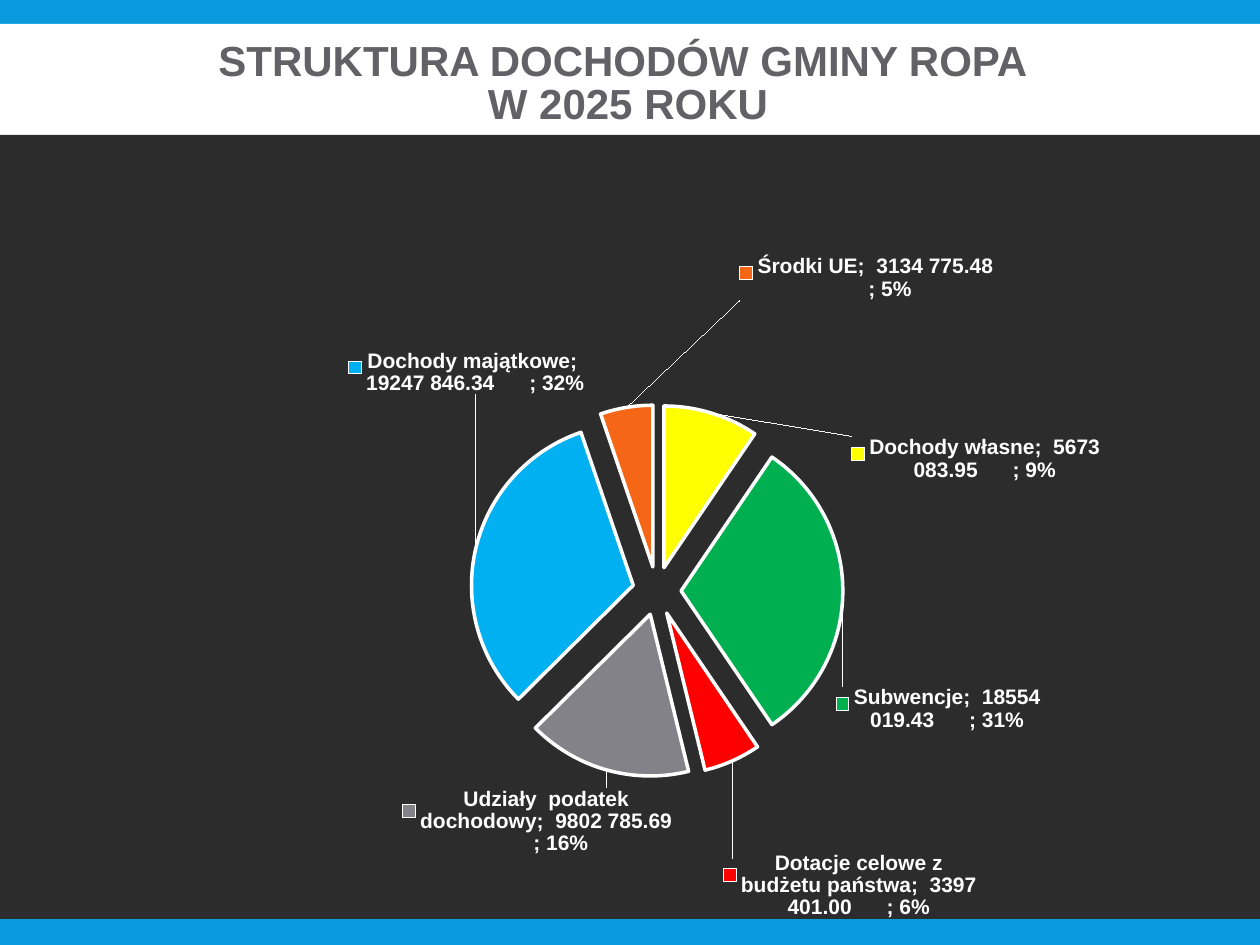
"""Build a slide with an exploded pie chart of a municipality's income."""
from copy import deepcopy

from lxml.etree import SubElement, fromstring
from pptx import Presentation
from pptx.chart.data import CategoryChartData
from pptx.dml.color import RGBColor
from pptx.enum.chart import XL_CHART_TYPE as ChartType, XL_LABEL_POSITION as LabelPosition
from pptx.enum.shapes import MSO_SHAPE as Shape
from pptx.enum.text import MSO_ANCHOR as Anchor, MSO_AUTO_SIZE as AutoSize, PP_ALIGN as Align
from pptx.oxml.ns import nsdecls, qn
from pptx.util import Emu, Pt

TITLE = ["STRUKTURA DOCHODÓW GMINY ROPA ", "W 2025 ROKU"]
BLUE, DARK, WHITE, GREY = "099BDD", "2C2C2C", "FFFFFF", "616166"
# name, value, colour, label shift in px
INCOME = [
    ("Dochody własne", 5673083.95, "FFFF00", (138, 75)),
    ("Subwencje", 18554019.43, "00B050", (-14, 118)),
    ("Dotacje celowe z budżetu państwa", 3397401.00, "FF0000", (-12, 91)),
    ("Udziały  podatek dochodowy", 9802785.69, "828288", (68, 11)),
    ("Dochody majątkowe", 19247846.34, "00B0F0", (116, -152)),
    ("Środki UE", 3134775.48, "F56617", (380, -100)),
]
NUMBER_FORMAT = r"_-* #\ ##0.00\ _z_ł_-;\-* #\ ##0.00\ _z_ł_-"
PAGE = (1260, 945)
BAND_BOX = (0, 24, 1260, 227)
TITLE_BOX = (64, 35, 1128, 100)
CHART_BOX = (0, 135, 1262, 784)
PLOT_BOX = (100, 270, 1114, 372)
EXPLOSION = 15


def px(length):
    return Emu(round(length * 914400 / 126))


def color(value):
    return RGBColor.from_string(value)


def place(item, box):
    item.left, item.top, item.width, item.height = map(px, box)


def set_font(font, name, size, value, bold):
    font.name, font.size, font.bold = name, Pt(size), bold
    font.color.rgb = color(value)


def layout(numbers, inner=False):
    """Return a manual layout whose px lengths become fractions of the chart."""
    root = fromstring(f"<c:layout {nsdecls('c')}/>")
    manual = SubElement(root, qn("c:manualLayout"))
    if inner:
        for tag, value in (("layoutTarget", "inner"), ("xMode", "edge"), ("yMode", "edge")):
            SubElement(manual, qn(f"c:{tag}")).set("val", value)
    for tag, number, whole in zip("xywh", numbers, CHART_BOX[2:] * 2):
        SubElement(manual, qn(f"c:{tag}")).set("val", f"{number / whole:.4f}")
    return root


def add_title(page):
    band = page.shapes.add_shape(Shape.RECTANGLE, *map(px, BAND_BOX))
    band.shadow.inherit = False
    band.fill.solid()
    band.fill.fore_color.rgb = color(WHITE)
    band.line.fill.background()
    title = page.shapes.title
    band._element.getparent().insert(2, band._element)
    place(title, TITLE_BOX)
    frame = title.text_frame
    frame.word_wrap, frame.auto_size = True, AutoSize.NONE
    frame.vertical_anchor = Anchor.MIDDLE
    para = frame.paragraphs[0]
    para.alignment, para.line_spacing = Align.CENTER, 0.85
    for index, line in enumerate(TITLE):
        if index:
            para.add_line_break()
        span = para.add_run()
        span.text = line
        set_font(span.font, "Arial", 24, GREY, True)


def style_labels(series):
    labels = series.data_labels
    labels.number_format, labels.number_format_is_linked = NUMBER_FORMAT, True
    labels.position = LabelPosition.OUTSIDE_END
    labels.show_value = labels.show_percentage = True
    labels.show_category_name = labels.show_legend_key = True
    set_font(labels.font, "Arial", 12, WHITE, True)
    group = labels._element
    separator = fromstring(f"<c:separator {nsdecls('c')}>; </c:separator>")
    group.find(qn("c:showBubbleSize")).addnext(separator)
    shared = [part for part in group if part.tag != qn("c:showLeaderLines")]
    for index, (*_, shift) in enumerate(INCOME):
        label = fromstring(f'<c:dLbl {nsdecls("c")}><c:idx val="{index}"/></c:dLbl>')
        label.append(layout(shift))
        label.extend(deepcopy(part) for part in shared)
        group.insert(index, label)


def add_pie(page):
    data = CategoryChartData(number_format=NUMBER_FORMAT)
    data.categories = [name for name, *_ in INCOME]
    data.add_series("Series 1", [value for _, value, *_ in INCOME])
    chart = page.shapes.add_chart(ChartType.PIE, *map(px, CHART_BOX), data).chart
    chart.has_legend = chart.has_title = False
    set_font(chart.font, "Calibri", 10, WHITE, False)
    background = fromstring(
        f'<c:spPr {nsdecls("c", "a")}><a:solidFill><a:srgbClr val="{DARK}"/></a:solidFill>'
        "<a:ln><a:noFill/></a:ln></c:spPr>")
    chart.element.find(qn("c:chart")).addnext(background)
    area = chart.element.find(f".//{qn('c:plotArea')}")
    for old in area.findall(qn("c:layout")):
        area.remove(old)
    area.insert(0, layout(PLOT_BOX, inner=True))
    plot = chart.plots[0]
    plot.vary_by_categories = True
    series = plot.series[0]
    series.format.line.color.rgb = color(WHITE)
    explosion = fromstring(f'<c:explosion {nsdecls("c")} val="{EXPLOSION}"/>')
    series._element.find(qn("c:spPr")).addnext(explosion)
    for index, (_, _, fill, _) in enumerate(INCOME):
        look = series.points[index].format
        look.fill.solid()
        look.fill.fore_color.rgb = color(fill)
        look.line.color.rgb = color(WHITE)
        look.line.width = Pt(2)
    style_labels(series)


def main():
    deck = Presentation()
    deck.slide_width, deck.slide_height = map(px, PAGE)
    page = deck.slides.add_slide(deck.slide_layouts[5])
    page.background.fill.solid()
    page.background.fill.fore_color.rgb = color(BLUE)
    add_title(page)
    add_pie(page)
    deck.save("out.pptx")


if __name__ == "__main__":
    main()
